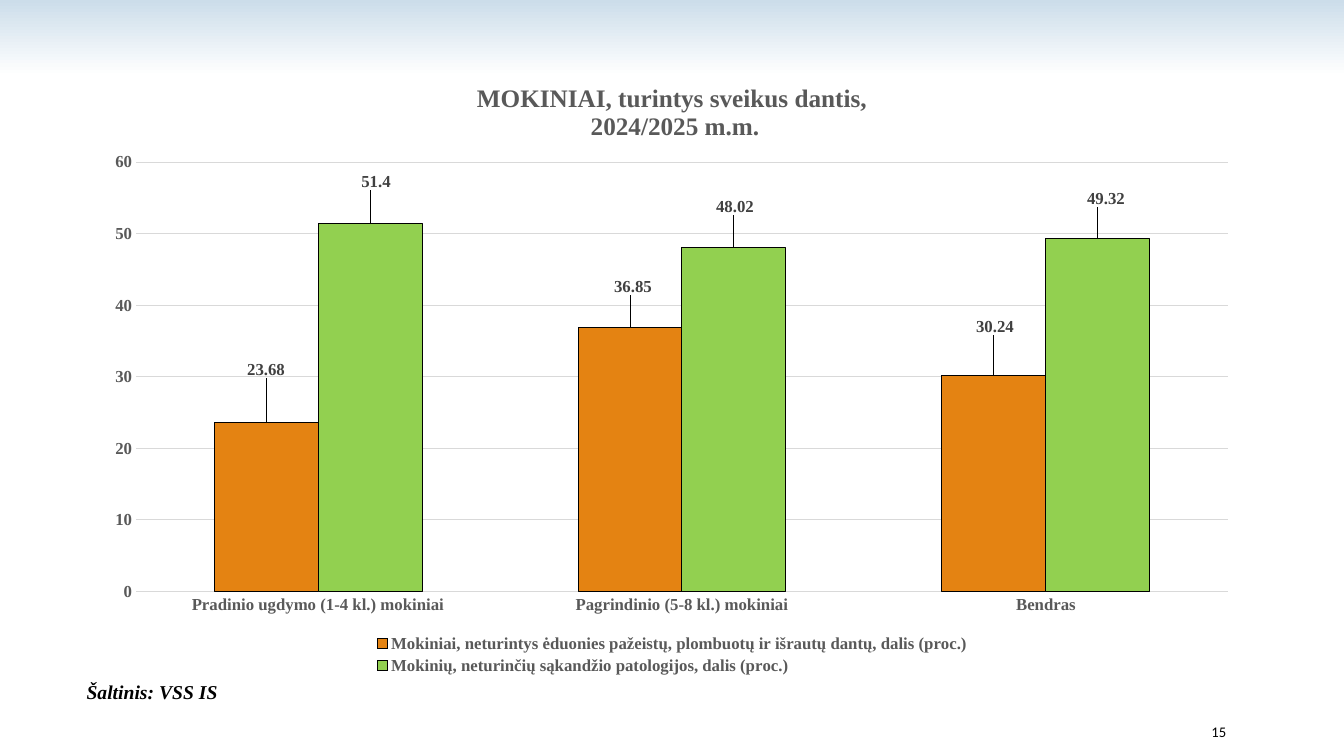
from dataclasses import dataclass

from lxml.etree import SubElement
from pptx import Presentation
from pptx.chart.data import CategoryChartData
from pptx.dml.color import RGBColor
from pptx.enum.chart import (XL_CHART_TYPE, XL_LABEL_POSITION,
                             XL_LEGEND_POSITION, XL_TICK_MARK)
from pptx.enum.text import MSO_ANCHOR, PP_ALIGN
from pptx.oxml.ns import qn
from pptx.util import Inches, Pt


@dataclass(frozen=True)
class Theme:
    serif: str = "Times New Roman"
    sans: str = "Calibri"
    black: str = "000000"
    gray: str = "595959"
    dark: str = "404040"
    grid: str = "D9D9D9"
    sky: str = "CCDDEA"
    white: str = "FFFFFF"
    title: float = 18
    label: float = 12
    source: float = 14
    number: float = 10.5


THEME = Theme()
WIDE, HIGH = 11.5, 6.17
TITLE = ("MOKINIAI, turintys sveikus dantis, ", "2024/2025 m.m.")
GROUPS = ("Pradinio ugdymo (1-4 kl.) mokiniai",
          "Pagrindinio (5-8 kl.) mokiniai", "Bendras")
# Name, colour, values, and label shifts in inches (right, down)
SERIES = (
    ("Mokiniai, neturintys ėduonies pažeistų, plombuotų ir išrautų dantų, dalis (proc.)",
     "E48312", (23.68, 36.85, 30.24), ((0, -0.39), (0.03, -0.28), (0.01, -0.35))),
    ("Mokinių, neturinčių sąkandžio patologijos, dalis (proc.)",
     "92D050", (51.4, 48.02, 49.32), ((0.06, -0.29), (0.01, -0.28), (0.08, -0.27))),
)


def rgb(code):
    return RGBColor.from_string(code)


def set_font(font, size, color, name=THEME.serif, bold=True, italic=False):
    font.size, font.name = Pt(size), name
    font.bold, font.italic = bold, italic
    font.color.rgb = rgb(color)


def place(node, after, modes=(), **spots):
    """Give a chart part a manual layout, in inches within the chart."""
    for old in node.findall(qn("c:layout")):
        node.remove(old)
    layout = SubElement(node, qn("c:layout"))
    if after is None:
        node.insert(0, layout)
    else:
        node.find(qn(after)).addnext(layout)
    manual = SubElement(layout, qn("c:manualLayout"))
    for tag, val in modes:
        SubElement(manual, qn(f"c:{tag}")).set("val", val)
    for key, val in spots.items():
        part = val / (WIDE if key in "xw" else HIGH)
        SubElement(manual, qn(f"c:{key}")).set("val", f"{part:.4f}")


def paint_back(slide):
    fill = slide.background.fill
    fill.gradient()
    fill.gradient_angle = 270
    stops = zip(fill.gradient_stops, (0, 0.1), (THEME.sky, THEME.white))
    for stop, spot, color in stops:
        stop.position = spot
        stop.color.rgb = rgb(color)


def style_axis(axis):
    axis.major_tick_mark = axis.minor_tick_mark = XL_TICK_MARK.NONE
    axis.format.line.fill.background()
    set_font(axis.tick_labels.font, THEME.label, THEME.gray)


def style_bars(series, color, shifts):
    series.format.fill.solid()
    series.format.fill.fore_color.rgb = rgb(color)
    series.format.line.color.rgb = rgb(THEME.black)
    series.format.line.width = Pt(0.75)
    labels = series.data_labels
    labels.show_value = True
    set_font(labels.font, THEME.label, THEME.dark)
    for i, (right, down) in enumerate(shifts):
        label = series.points[i].data_label
        set_font(label.font, THEME.label, THEME.dark)
        label.position = XL_LABEL_POSITION.OUTSIDE_END
    for node, (right, down) in zip(labels._element.findall(qn("c:dLbl")), shifts):
        place(node, "c:idx", x=right, y=down)


def add_title(chart):
    frame = chart.chart_title.text_frame
    frame.text = "\n".join(TITLE)
    for par in frame.paragraphs:
        par.alignment = PP_ALIGN.CENTER
        for run in par.runs:
            set_font(run.font, THEME.title, THEME.gray)
    edge = (("xMode", "edge"), ("yMode", "edge"))
    place(chart.chart_title._element, "c:tx", edge, x=3.78, y=0.22)


def add_bars(slide):
    data = CategoryChartData()
    data.categories = GROUPS
    for name, _, values, _ in SERIES:
        data.add_series(name, values)
    chart = slide.shapes.add_chart(
        XL_CHART_TYPE.COLUMN_CLUSTERED, Inches(0.92), Inches(0.58),
        Inches(WIDE), Inches(HIGH), data).chart
    set_font(chart.font, THEME.label, THEME.gray)
    add_title(chart)

    plot = chart.plots[0]
    plot.gap_width, plot.overlap = 150, 0
    plot.vary_by_categories = False
    for series, (_, color, _, shifts) in zip(plot.series, SERIES):
        style_bars(series, color, shifts)

    style_axis(chart.category_axis)
    axis = chart.value_axis
    style_axis(axis)
    axis.minimum_scale, axis.maximum_scale, axis.major_unit = 0, 60, 10
    line = axis.major_gridlines.format.line
    line.color.rgb, line.width = rgb(THEME.grid), Pt(0.75)

    chart.has_legend = True
    legend = chart.legend
    legend.position = XL_LEGEND_POSITION.BOTTOM
    legend.include_in_layout = False
    set_font(legend.font, THEME.label, THEME.gray)
    edge = (("xMode", "edge"), ("yMode", "edge"))
    place(legend._element, "c:legendPos", edge, x=2.75, y=5.68, w=6, h=0.47)
    area = chart._chartSpace.chart.plotArea
    place(area, None, (("layoutTarget", "inner"),) + edge,
          x=0.43, y=1.03, w=10.83, h=4.26)


def add_text(slide, text, box, align, wrap, **style):
    frame = slide.shapes.add_textbox(*map(Inches, box)).text_frame
    frame.word_wrap = wrap
    frame.vertical_anchor = MSO_ANCHOR.MIDDLE
    frame.text = text
    par = frame.paragraphs[0]
    par.alignment = align
    set_font(par.runs[0].font, color=THEME.black, **style)


def main():
    deck = Presentation()
    deck.slide_width, deck.slide_height = Inches(13.33), Inches(7.5)
    slide = deck.slides.add_slide(deck.slide_layouts[6])
    paint_back(slide)
    add_bars(slide)
    add_text(slide, "15", (10.83, 7.06, 1.43, 0.4), PP_ALIGN.RIGHT, True,
             size=THEME.number, name=THEME.sans, bold=False)
    add_text(slide, "Šaltinis: VSS IS", (0.76, 6.69, 1.51, 0.34), PP_ALIGN.LEFT,
             False, size=THEME.source, italic=True)
    deck.save("out.pptx")


if __name__ == "__main__":
    main()
